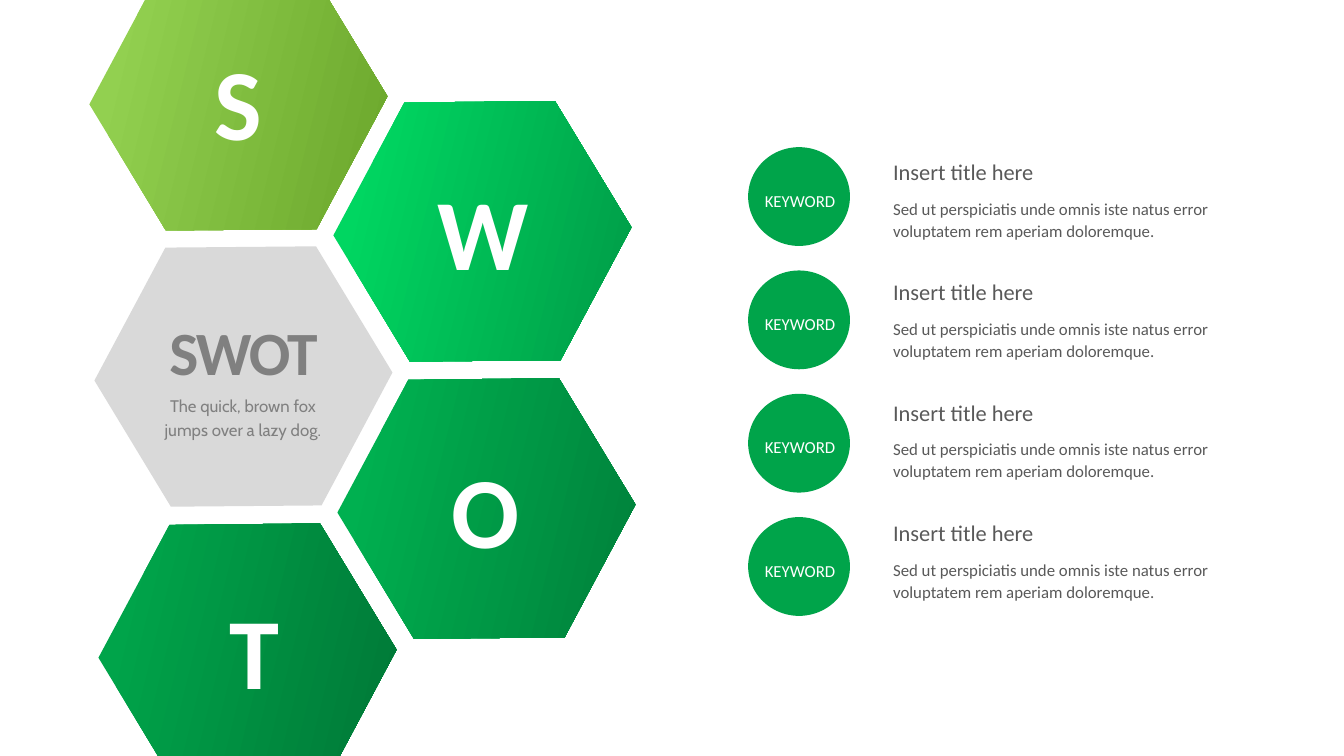
"""Build a SWOT honeycomb slide with four keyword rows."""
from dataclasses import dataclass

from pptx import Presentation
from pptx import util as u
from pptx.dml import color
from pptx.enum import shapes, text

COLORS = {
    "white": "FFFFFF", "panel": "D9D9D9", "muted": "808080", "body": "595959",
    "badge": "00A44A",
    "lime": "92D050", "olive": "6EAA2E",
    "mint": "00D661", "jade": "00A049",
    "green": "00B050", "forest": "00843C", "pine": "007B38",
}


@dataclass(frozen=True)
class Style:
    size: float
    color: str
    font: str = "Calibri"
    bold: bool = False
    centred: bool = True
    wrap: bool = True
    line_spacing: float = 1.0
    tracking: float = 0


@dataclass(frozen=True)
class Hexagon:
    left: float
    top: float
    stops: tuple[str, ...]


@dataclass(frozen=True)
class Label:
    words: str
    left: float
    top: float
    width: float
    height: float
    style: Style


LETTER = Style(71.9, "white", bold=True, tracking=-1.5)
HEADING = Style(43.9, "muted", bold=True, tracking=-1.5)
TAGLINE = Style(12, "muted", font="Cabin", line_spacing=1.2)
KEYWORD = Style(12, "white", wrap=False)
TITLE = Style(16, "body", centred=False, wrap=False)
DETAIL = Style(12, "body", centred=False, line_spacing=1.1)

HEXAGONS = (
    Hexagon(0.87, -0.29, ("lime", "olive")),
    Hexagon(3.29, 1.01, ("mint", "jade")),
    Hexagon(3.33, 3.76, ("green", "forest")),
    Hexagon(0.96, 5.2, ("badge", "pine")),
    Hexagon(0.92, 2.45, ("panel",)),
)
HEXAGON_LABELS = (
    Label("S", 1.73, 0.35, 1.27, 1.31, LETTER),
    Label("W", 4.16, 1.64, 1.27, 1.31, LETTER),
    Label("O", 4.18, 4.39, 1.27, 1.31, LETTER),
    Label("T", 1.93, 5.79, 1.18, 1.31, LETTER),
    Label("SWOT", 1.25, 3.07, 2.33, 0.84, HEADING),
    Label("The quick, brown fox jumps over a lazy dog.", 1.4, 3.84, 2.02, 0.56, TAGLINE),
)
ROWS = 4
BADGE_PITCH = (5.13 - 1.46) / (ROWS - 1)
TEXT_PITCH = (5.1 - 1.52) / (ROWS - 1)
DETAIL_WORDS = (
    "Sed ut perspiciatis unde omnis iste natus error "
    "voluptatem rem aperiam doloremque."
)


def rgb(name: str) -> color.RGBColor:
    return color.RGBColor.from_string(COLORS[name])


def add_plain_shape(page, kind, left: float, top: float, width: float, height: float):
    shape = page.shapes.add_shape(
        kind, u.Inches(left), u.Inches(top), u.Inches(width), u.Inches(height)
    )
    shape.shadow.inherit = False
    shape.line.fill.background()
    return shape


def add_hexagon(page, cell: Hexagon) -> None:
    shape = add_plain_shape(page, shapes.MSO_SHAPE.HEXAGON, cell.left, cell.top, 2.99, 2.57)
    shape.adjustments[0] = 0.297
    shape.rotation = 238.8
    shape._element.spPr.xfrm.set("flipH", "1")
    if len(cell.stops) == 1:
        shape.fill.solid()
        shape.fill.fore_color.rgb = rgb(cell.stops[0])
        return
    shape.fill.gradient()
    shape.fill.gradient_angle = 315
    for stop, name, position in zip(shape.fill.gradient_stops, cell.stops, (0.21, 0.83)):
        stop.color.rgb = rgb(name)
        stop.position = position


def add_badge(page, top: float) -> None:
    badge = add_plain_shape(page, shapes.MSO_SHAPE.OVAL, 7.42, top, 1.01, 0.98)
    badge.fill.solid()
    badge.fill.fore_color.rgb = rgb("badge")


def add_label(page, label: Label) -> None:
    style = label.style
    box = page.shapes.add_textbox(
        u.Inches(label.left), u.Inches(label.top),
        u.Inches(label.width), u.Inches(label.height),
    )
    frame = box.text_frame
    frame.word_wrap = style.wrap
    frame.auto_size = text.MSO_AUTO_SIZE.SHAPE_TO_FIT_TEXT
    para = frame.paragraphs[0]
    para.alignment = text.PP_ALIGN.CENTER if style.centred else text.PP_ALIGN.LEFT
    para.line_spacing = style.line_spacing
    span = para.add_run()
    span.text = label.words
    span.font.name = style.font
    span.font.size = u.Pt(style.size)
    span.font.bold = style.bold
    span.font.color.rgb = rgb(style.color)
    if style.tracking:
        span.font._element.set("spc", str(round(style.tracking * 100)))


def add_row(page, index: int) -> None:
    badge_top = 1.46 + index * BADGE_PITCH
    title_top = 1.52 + index * TEXT_PITCH
    add_badge(page, badge_top)
    add_label(page, Label("KEYWORD", 7.48, badge_top + 0.38, 0.91, 0.3, KEYWORD))
    add_label(page, Label("Insert title here", 8.76, title_top, 1.61, 0.37, TITLE))
    add_label(page, Label(DETAIL_WORDS, 8.76, title_top + 0.38, 3.63, 0.54, DETAIL))


def main() -> None:
    deck = Presentation()
    deck.slide_width = u.Inches(13.33)
    deck.slide_height = u.Inches(7.5)
    page = deck.slides.add_slide(deck.slide_layouts[6])
    for cell in HEXAGONS:
        add_hexagon(page, cell)
    for label in HEXAGON_LABELS:
        add_label(page, label)
    for index in range(ROWS):
        add_row(page, index)
    deck.save("out.pptx")


if __name__ == "__main__":
    main()
